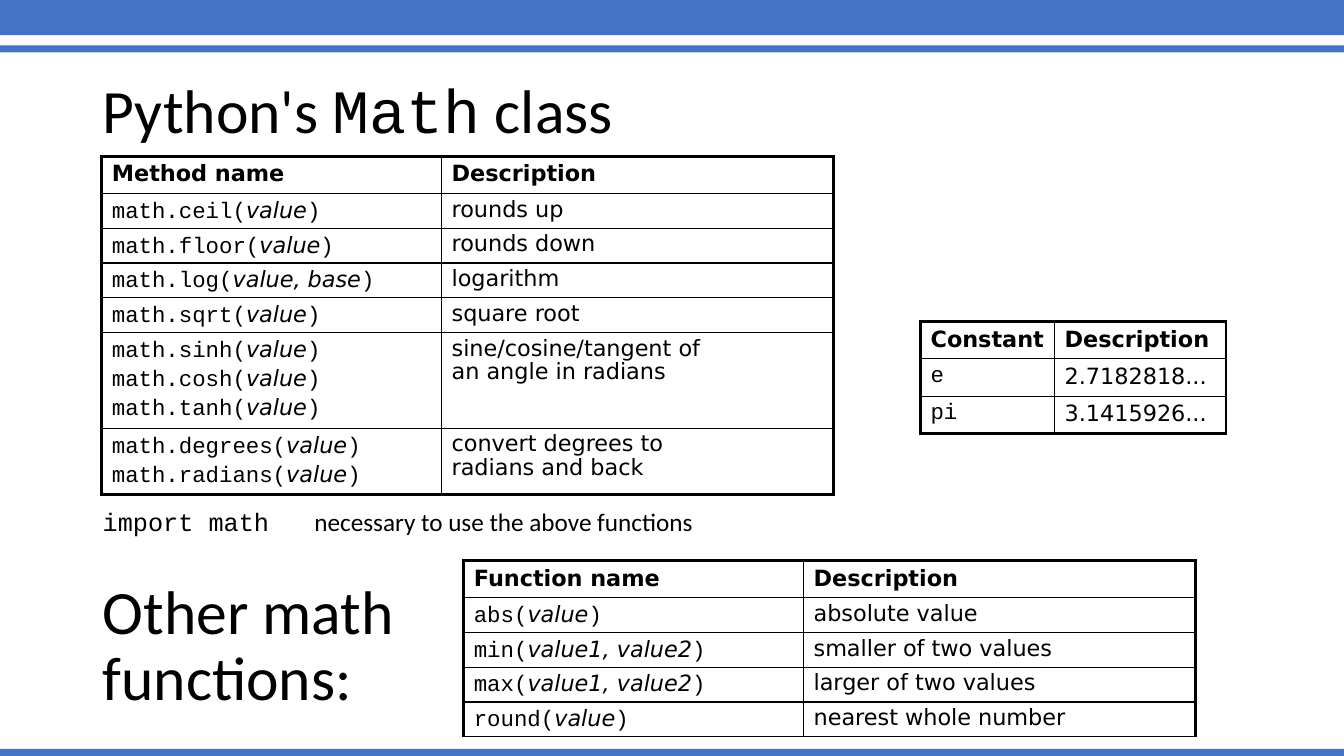
from dataclasses import dataclass

from lxml.etree import SubElement
from pptx import Presentation
from pptx.dml.color import RGBColor
from pptx.enum.shapes import MSO_SHAPE
from pptx.enum.text import MSO_ANCHOR, PP_ALIGN
from pptx.oxml.ns import qn
from pptx.util import Inches, Pt


@dataclass
class Theme:
    blue = RGBColor(0x44, 0x72, 0xC4)
    black = RGBColor(0, 0, 0)
    white = RGBColor(255, 255, 255)
    head = Pt(44)
    note = Pt(18)
    cell = Pt(16)
    gap = Pt(3.2)
    thick = Pt(2.25)
    thin = Pt(1)
    body = "Calibri"
    code = "Courier New"
    sans = "DejaVu Sans"


theme = Theme()


def add_run(para, text, font, size, bold=False, italic=False):
    run = para.add_run()
    run.text = text
    run.font.name, run.font.size = font, size
    run.font.bold, run.font.italic = bold, italic
    run.font.color.rgb = theme.black


def add_edge(cell, side, width):
    """Draw one border of a cell; side is L, R, T or B."""
    line = SubElement(cell._tc.get_or_add_tcPr(), qn(f"a:ln{side}"), w=str(width))
    paint = SubElement(line, qn("a:solidFill"))
    SubElement(paint, qn("a:srgbClr"), val=str(theme.black))


deck = Presentation()
deck.slide_width, deck.slide_height = Inches(13.33), Inches(7.5)
slide = deck.slides.add_slide(deck.slide_layouts[5])
shapes = slide.shapes

# Bars across the top and bottom
for top, height in [(-0.03, 0.38), (0.45, 0.07), (7.43, 0.07)]:
    bar = shapes.add_shape(MSO_SHAPE.RECTANGLE, 0, Inches(top),
                           deck.slide_width, Inches(height))
    bar.shadow.inherit = False
    bar.fill.solid()
    bar.fill.fore_color.rgb = theme.blue
    bar.line.fill.background()

# Title
title = shapes.title
title.left, title.top = Inches(0.92), Inches(0.4)
title.width, title.height = Inches(11.5), Inches(1.45)
title.text_frame.vertical_anchor = MSO_ANCHOR.MIDDLE
para = title.text_frame.paragraphs[0]
para.alignment, para.line_spacing = PP_ALIGN.LEFT, 0.9
for text, font in [("Python's ", theme.body), ("Math", theme.code),
                   (" class", theme.body)]:
    add_run(para, text, font, theme.head)

# Each row: calls as (name, arguments), then the lines of the description
methods = [
    ([("math.ceil", "value")], ["rounds up"]),
    ([("math.floor", "value")], ["rounds down"]),
    ([("math.log", "value, base")], ["logarithm"]),
    ([("math.sqrt", "value")], ["square root"]),
    ([("math.sinh", "value"), ("math.cosh", "value"), ("math.tanh", "value")],
     ["sine/cosine/tangent of", "an angle in radians"]),
    ([("math.degrees", "value"), ("math.radians", "value")],
     ["convert degrees to", "radians and back"]),
]
constants = [
    ([("e", "")], ["2.7182818..."]),
    ([("pi", "")], ["3.1415926..."]),
]
others = [
    ([("abs", "value")], ["absolute value"]),
    ([("min", "value1, value2")], ["smaller of two values"]),
    ([("max", "value1, value2")], ["larger of two values"]),
    ([("round", "value")], ["nearest whole number"]),
]

# Label, rows, left, top, column widths, body row heights, line spacing, last edge
tables = [
    ("Method name", methods, 1.01, 1.55, (3.37, 3.89),
     [0.34] * 4 + [0.95, 0.66], 0.9, theme.thick),
    ("Constant", constants, 9.13, 3.19, (1.33, 1.7),
     [0.37] * 2, 1.0, theme.thick),
    ("Function name", others, 4.6, 5.56, (3.37, 3.89),
     [0.34] * 4, 0.9, theme.thin),
]
for label, rows, left, top, widths, heights, space, last in tables:
    heights = [0.37] + heights
    table = shapes.add_table(len(heights), 2, Inches(left), Inches(top),
                             Inches(sum(widths)), Inches(sum(heights))).table
    table.first_row = table.horz_banding = False
    for col, width in zip(table.columns, widths):
        col.width = Inches(width)
    for row, height in zip(table.rows, heights):
        row.height = Inches(height)

    for cell, text in zip(table.rows[0].cells, (label, "Description")):
        para = cell.text_frame.paragraphs[0]
        para.space_before = theme.gap
        add_run(para, text, theme.sans, theme.cell, bold=True)

    for i, (calls, lines) in enumerate(rows, 1):
        frame = table.cell(i, 0).text_frame
        for n, (name, args) in enumerate(calls):
            para = frame.add_paragraph() if n else frame.paragraphs[0]
            para.space_before, para.line_spacing = theme.gap, space
            add_run(para, name + "(" if args else name, theme.code, theme.cell)
            if args:
                add_run(para, args, theme.sans, theme.cell, italic=True)
                add_run(para, ")", theme.code, theme.cell)
        para = table.cell(i, 1).text_frame.paragraphs[0]
        para.space_before, para.line_spacing = theme.gap, space
        for n, line in enumerate(lines):
            if n:
                para.add_line_break()
            add_run(para, line, theme.sans, theme.cell)

    for i, row in enumerate(table.rows):
        for j, cell in enumerate(row.cells):
            add_edge(cell, "L", theme.thin if j else theme.thick)
            add_edge(cell, "R", theme.thick if j else theme.thin)
            add_edge(cell, "T", theme.thin if i else theme.thick)
            add_edge(cell, "B", last if i == len(rows) else theme.thin)
            cell.fill.solid()
            cell.fill.fore_color.rgb = theme.white

# Second heading
box = shapes.add_textbox(Inches(0.92), Inches(5.7), Inches(5.39), Inches(1.45))
box.text_frame.word_wrap = True
box.text_frame.vertical_anchor = MSO_ANCHOR.MIDDLE
para = box.text_frame.paragraphs[0]
para.line_spacing = 0.9
add_run(para, "Other math functions:", theme.body, theme.head)

# Import note, with a tab stop between code and remark
note = shapes.add_textbox(Inches(0.92), Inches(4.97), Inches(6.11), Inches(0.4))
note.text_frame.word_wrap = False
para = note.text_frame.paragraphs[0]
stops = SubElement(para._p.get_or_add_pPr(), qn("a:tabLst"))
SubElement(stops, qn("a:tab"), pos=str(Inches(2.1)), algn="l")
add_run(para, "import math\t", theme.code, theme.note)
add_run(para, "necessary to use the above functions", theme.body, theme.note)

deck.save("out.pptx")
